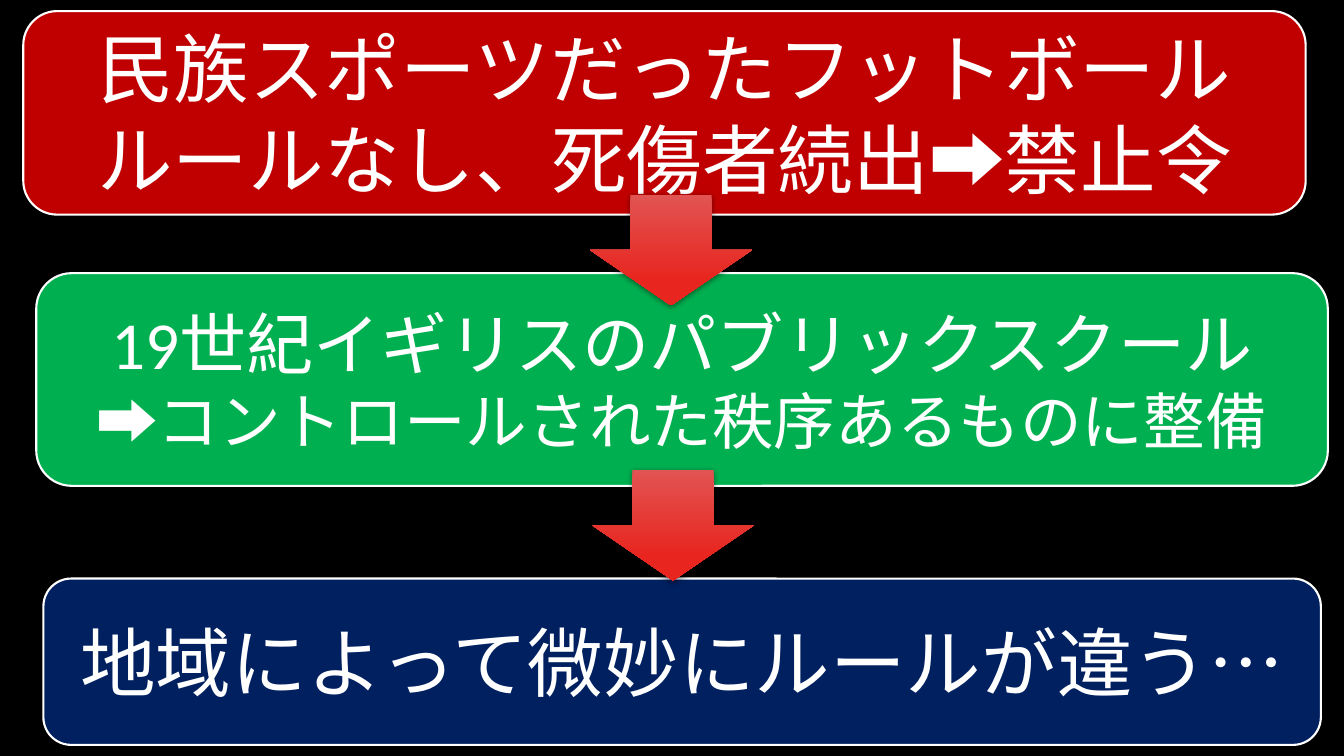
"""Build a slide that traces how football's rules developed."""
from dataclasses import dataclass

from lxml import etree
from pptx import Presentation
from pptx.dml.color import RGBColor
from pptx.enum.shapes import MSO_SHAPE
from pptx.enum.text import MSO_ANCHOR, PP_ALIGN
from pptx.oxml.ns import qn
from pptx.util import Inches, Pt

ROUNDED = MSO_SHAPE.ROUNDED_RECTANGLE
DOWN_ARROW = MSO_SHAPE.DOWN_ARROW
MIDDLE = MSO_ANCHOR.MIDDLE
CENTER = PP_ALIGN.CENTER
BLANK_LAYOUT = 6
SLIDE_WIDTH, SLIDE_HEIGHT = Inches(13.33), Inches(7.5)
COLUMNS = ROWS = 100
ARROW_SIZE = (12.08, 14.67)


@dataclass(frozen=True)
class Theme:
    """Hold the colours, font and type sizes of the slide."""
    background: str = "000000"
    text: str = "FFFFFF"
    outline: str = "FFFFFF"
    folk: str = "C00000"
    school: str = "00B050"
    region: str = "002060"
    arrow_stops: tuple = ((0, "E25452"), (0.78, "E8251F"))
    shadow: str = "000000"
    font: str = "Calibri"
    large: int = 54
    medium: int = 48
    small: int = 44
    outline_width: float = 1.5


THEME = Theme()


def color(value):
    """Turn a hex string into a colour."""
    return RGBColor.from_string(value)


def place(page, kind, left, top, width, height):
    """Add a preset shape measured in grid columns and rows."""
    column, row = SLIDE_WIDTH / COLUMNS, SLIDE_HEIGHT / ROWS
    shape = page.shapes.add_shape(
        kind, round(left * column), round(top * row),
        round(width * column), round(height * row))
    shape.shadow.inherit = False
    return shape


def add_line(para, text, size):
    """Write one centred line of text into a paragraph."""
    para.alignment = CENTER
    span = para.add_run()
    span.text = text
    span.font.name = THEME.font
    span.font.size = Pt(size)
    span.font.color.rgb = color(THEME.text)


def add_stage(page, bounds, fill, lines):
    """Add a rounded box that describes one stage."""
    box = place(page, ROUNDED, *bounds)
    box.fill.solid()
    box.fill.fore_color.rgb = color(fill)
    box.line.color.rgb = color(THEME.outline)
    box.line.width = Pt(THEME.outline_width)
    frame = box.text_frame
    frame.word_wrap = True
    frame.vertical_anchor = MIDDLE
    for index, (text, size) in enumerate(lines):
        para = frame.add_paragraph() if index else frame.paragraphs[0]
        add_line(para, text, size)


def add_soft_shadow(shape):
    """Give a shape a soft shadow that falls straight down."""
    effects = shape._element.spPr.find(qn("a:effectLst"))
    shadow = etree.SubElement(
        effects, qn("a:outerShdw"), blurRad=str(Pt(4.5)), dist=str(Pt(1.5)),
        dir="5400000", rotWithShape="0")
    tone = etree.SubElement(shadow, qn("a:srgbClr"), val=THEME.shadow)
    etree.SubElement(tone, qn("a:alpha"), val="48000")


def add_step_arrow(page, left, top):
    """Add a shaded arrow that leads down to the next stage."""
    arrow = place(page, DOWN_ARROW, left, top, *ARROW_SIZE)
    arrow.fill.gradient()
    arrow.fill.gradient_angle = 270
    for stop, (position, tone) in zip(arrow.fill.gradient_stops, THEME.arrow_stops):
        stop.position = position
        stop.color.rgb = color(tone)
    arrow.line.fill.background()
    add_soft_shadow(arrow)


def main():
    """Create the deck and save it."""
    deck = Presentation()
    deck.slide_width, deck.slide_height = SLIDE_WIDTH, SLIDE_HEIGHT
    page = deck.slides.add_slide(deck.slide_layouts[BLANK_LAYOUT])
    page.background.fill.solid()
    page.background.fill.fore_color.rgb = color(THEME.background)

    add_stage(page, (1.73, 1.47, 95.42, 26.93), THEME.folk, [
        ("民族スポーツだったフットボール", THEME.large),
        ("ルールなし、死傷者続出➡禁止令", THEME.large)])
    add_stage(page, (2.7, 36.13, 96.1, 28.13), THEME.school, [
        ("19世紀イギリスのパブリックスクール", THEME.medium),
        ("➡コントロールされた秩序あるものに整備", THEME.small)])
    add_step_arrow(page, 43.89, 25.73)
    add_stage(page, (3.23, 76.53, 95.05, 22), THEME.region, [
        ("地域によって微妙にルールが違う…", THEME.large)])
    add_step_arrow(page, 44.04, 62.13)
    deck.save("out.pptx")


if __name__ == "__main__":
    main()
